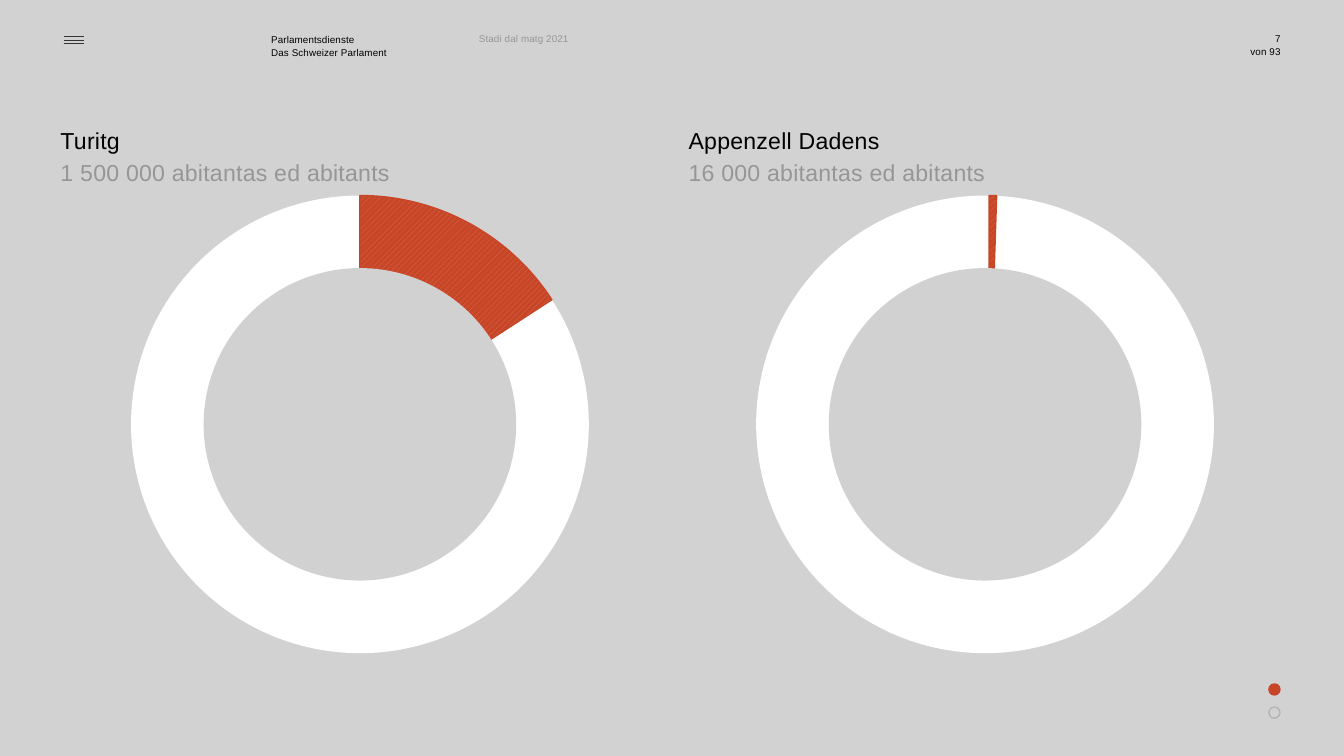
import math
from lxml import etree
from pptx import Presentation
from pptx.dml.color import RGBColor
from pptx.enum.dml import MSO_PATTERN
from pptx.enum.shapes import MSO_CONNECTOR, MSO_SHAPE
from pptx.enum.text import PP_ALIGN
from pptx.oxml.ns import qn
from pptx.util import Inches, Pt

LEFT, RIGHT = PP_ALIGN.LEFT, PP_ALIGN.RIGHT
STRIPES = MSO_PATTERN.WIDE_UPWARD_DIAGONAL
OVAL = MSO_SHAPE.OVAL
STRAIGHT = MSO_CONNECTOR.STRAIGHT

BACKGROUND, HOLE, WHITE, BLACK = "D2D2D2", "D1D1D1", "FFFFFF", "000000"
GRAY, RED, LIGHT_RED = "969696", "C84628", "DD6F55"
MENU_LINE, DOT_LINE = "343434", "B4B4B4"

SMALL = {"size": 7, "spc": 10}
LARGE = {"size": 16.5, "spc": 20}
HEADER = [
    ((2.69, 0.32, 1.3, 0.26), LEFT, 1.1,
     [("Parlamentsdienste", BLACK), ("Das Schweizer Parlament", BLACK)]),
    ((4.75, 0.32, 1.21, 0.12), LEFT, 1.0, [("Stadi dal matg 2021", GRAY)]),
    ((12.26, 0.32, 0.44, 0.12), RIGHT, 1.0, [("7", BLACK)]),
    ((12.26, 0.45, 0.44, 0.12), RIGHT, 1.0, [("von 93", BLACK)]),
]
CANTONS = [
    {"name": "Turitg", "people": "1 500 000 abitantas ed abitants",
     "text_left": 0.6, "ring_x": 3.57, "wedge_x": 3.57, "degrees": 57},
    {"name": "Appenzell Dadens", "people": "16 000 abitantas ed abitants",
     "text_left": 6.83, "ring_x": 9.77, "wedge_x": 9.81, "degrees": 1.9},
]
RING_Y, OUTER, INNER = 4.21, 2.27, 1.55
MENU_LEFT, MENU_RIGHT, MENU_TOP, MENU_STEP = 0.63, 0.83, 0.36, 0.035
DOTS = [(6.84, RED, RED), (7.07, None, DOT_LINE)]
DOT_X, DOT_RADIUS = 12.64, 0.055


def rgb(value):
    return RGBColor.from_string(value)


def add_text(slide, box, align, spacing, lines, style):
    tf = slide.shapes.add_textbox(*map(Inches, box)).text_frame
    frame_format = {"word_wrap": True, "margin_left": 0, "margin_right": 0,
                    "margin_top": 0, "margin_bottom": 0}
    for name, value in frame_format.items():
        setattr(tf, name, value)
    for i, (text, color) in enumerate(lines):
        p = tf.add_paragraph() if i else tf.paragraphs[0]
        p.alignment, p.line_spacing = align, spacing
        r = p.add_run()
        r.text = text
        for name, value in {"name": "Arial", "size": Pt(style["size"])}.items():
            setattr(r.font, name, value)
        r.font.color.rgb = rgb(color)
        r._r.get_or_add_rPr().set("spc", str(style["spc"]))


def add_circle(slide, x, y, radius, fill, line=None):
    box = (x - radius, y - radius, 2 * radius, 2 * radius)
    sp = slide.shapes.add_shape(OVAL, *map(Inches, box))
    sp.shadow.inherit = False
    if fill:
        sp.fill.solid()
        sp.fill.fore_color.rgb = rgb(fill)
    else:
        sp.fill.background()
    if line:
        sp.line.color.rgb = rgb(line)
        sp.line.width = Pt(1)
    else:
        sp.line.fill.background()


def add_wedge(slide, x, y, radius, degrees):
    steps = max(4, round(degrees))
    angles = [math.radians(degrees * i / steps) for i in range(steps + 1)]
    arc = [(Inches(x + radius * math.sin(a)), Inches(y - radius * math.cos(a)))
           for a in angles]
    builder = slide.shapes.build_freeform(Inches(x), Inches(y))
    builder.add_line_segments(arc, close=True)
    sp = builder.convert_to_shape()
    sp.shadow.inherit = False
    sp.fill.patterned()
    sp.fill.pattern = STRIPES
    sp.fill.fore_color.rgb = rgb(LIGHT_RED)
    sp.fill.back_color.rgb = rgb(RED)
    sp.line.color.rgb = rgb(RED)
    sp.line.width = Pt(1)


def add_menu_line(slide, y):
    ends = (MENU_LEFT, y, MENU_RIGHT, y)
    line = slide.shapes.add_connector(STRAIGHT, *map(Inches, ends))
    line.line.color.rgb = rgb(MENU_LINE)
    line.line.width = Pt(0.4)
    etree.SubElement(line._element.spPr, qn("a:effectLst"))


def main():
    prs = Presentation()
    prs.slide_width, prs.slide_height = Inches(13.33), Inches(7.5)
    slide = prs.slides.add_slide(prs.slide_layouts[6])
    slide.background.fill.solid()
    slide.background.fill.fore_color.rgb = rgb(BACKGROUND)

    for box, align, spacing, lines in HEADER:
        add_text(slide, box, align, spacing, lines, SMALL)
    for i in range(3):
        add_menu_line(slide, MENU_TOP + i * MENU_STEP)

    for canton in CANTONS:
        lines = [(canton["name"], BLACK), (canton["people"], GRAY)]
        add_text(slide, (canton["text_left"], 1.22, 5.59, 0.96), LEFT, 1.14,
                 lines, LARGE)
        add_circle(slide, canton["ring_x"], RING_Y, OUTER, WHITE)
        add_wedge(slide, canton["wedge_x"], RING_Y, OUTER, canton["degrees"])
        add_circle(slide, canton["ring_x"], RING_Y, INNER, HOLE)

    for y, fill, line in DOTS:
        add_circle(slide, DOT_X, y, DOT_RADIUS, fill, line)
    prs.save("out.pptx")


if __name__ == "__main__":
    main()
